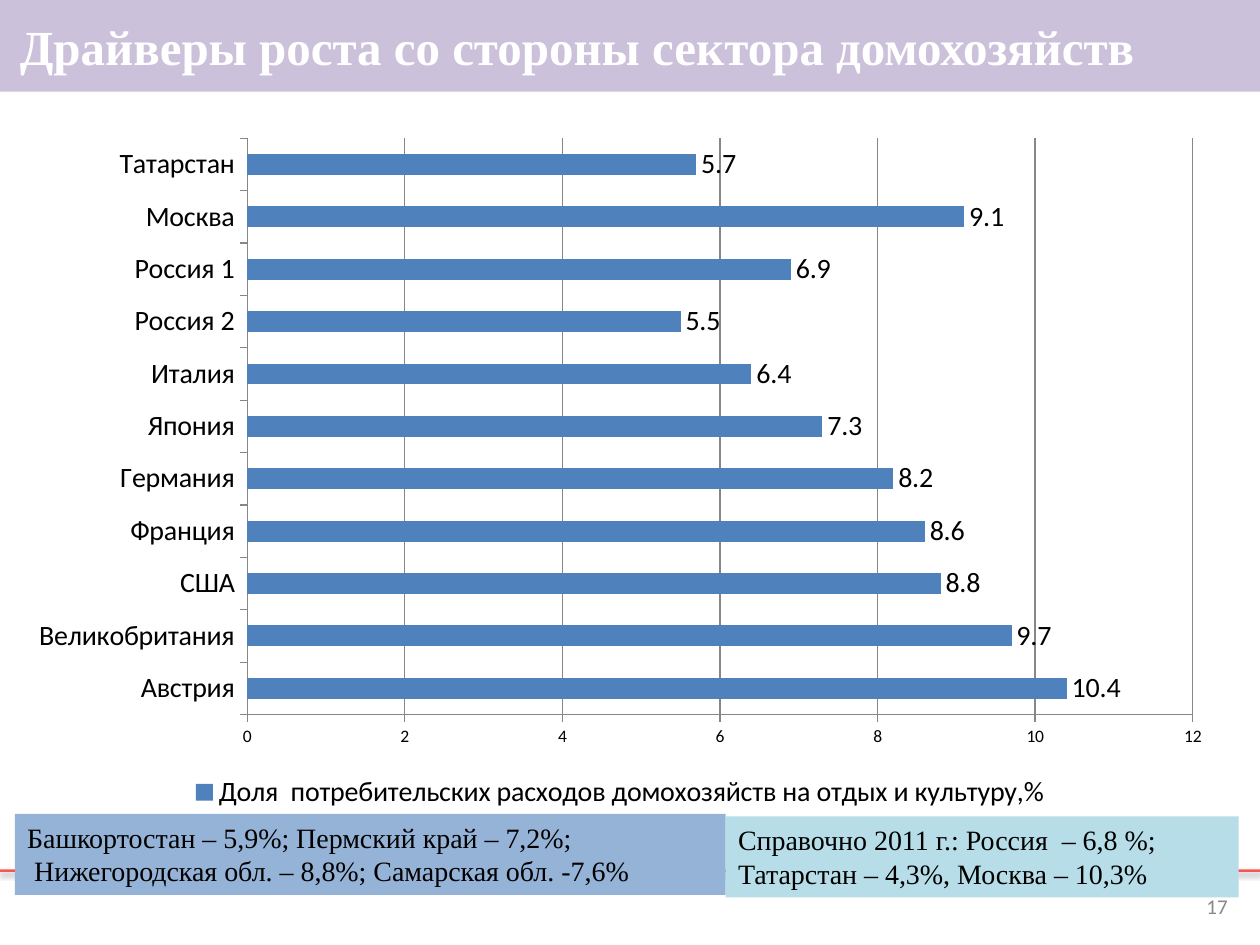
from dataclasses import dataclass

import lxml.etree
import pptx
import pptx.chart.data
import pptx.dml.color
import pptx.enum.chart
import pptx.enum.shapes
import pptx.enum.text
import pptx.oxml
import pptx.oxml.ns
import pptx.util

Cm = pptx.util.Cm
Pt = pptx.util.Pt
ALIGN = pptx.enum.text.PP_ALIGN
ANCHOR = pptx.enum.text.MSO_ANCHOR
TITLE_ONLY = 5


def rgb(value):
    return pptx.dml.color.RGBColor.from_string(value)


@dataclass(frozen=True)
class Theme:
    serif: str = "Times New Roman"
    sans: str = "Calibri"
    text: str = "000000"
    light: str = "FFFFFF"
    muted: str = "898989"
    band: str = "CCC1DA"
    bar: str = "4F81BD"
    grid: str = "878787"
    rule: str = "FF0000"
    regions: str = "95B3D7"
    reference: str = "B7DEE8"
    title_size: int = 28
    body_size: int = 16
    number_size: int = 12
    axis_size: int = 10


class Deck:
    """Holds the theme and the slide being built."""

    def __init__(self, theme):
        self.theme = theme
        self.prs = pptx.Presentation()
        self.prs.slide_width, self.prs.slide_height = Cm(25.4), Cm(19.05)
        self.s = self.prs.slides.add_slide(self.prs.slide_layouts[TITLE_ONLY])

    def font(self, font, size, color, name, bold=False):
        font.size, font.name, font.bold = Pt(size), name, bold
        font.color.rgb = rgb(color)

    def text(self, tf, lines, size, color, name, align=ALIGN.LEFT, bold=False):
        tf.word_wrap = True
        for i, line in enumerate(lines):
            p = tf.add_paragraph() if i else tf.paragraphs[0]
            p.alignment = align
            r = p.add_run()
            r.text = line
            self.font(r.font, size, color, name, bold)

    def rule(self, y):
        """Draw a translucent line with a soft shadow across the slide."""
        line = self.s.shapes.add_connector(
            pptx.enum.shapes.MSO_CONNECTOR.STRAIGHT, 0, y, self.prs.slide_width, y)
        line.line.color.rgb = rgb(self.theme.rule)
        line.line.width = Pt(1.5)
        ns = pptx.oxml.ns.qn
        color = next(line._element.spPr.iter(ns("a:srgbClr")))
        lxml.etree.SubElement(color, ns("a:alpha"), val="64000")
        line._element.spPr.append(pptx.oxml.parse_xml(
            f'<a:effectLst {pptx.oxml.ns.nsdecls("a")}>'
            '<a:outerShdw blurRad="40000" dist="20000" dir="5400000" rotWithShape="0">'
            '<a:srgbClr val="000000"><a:alpha val="38000"/></a:srgbClr>'
            '</a:outerShdw></a:effectLst>'))

    def number(self, text, x, y, w, h):
        tf = self.s.shapes.add_textbox(x, y, w, h).text_frame
        tf.vertical_anchor = ANCHOR.MIDDLE
        t = self.theme
        self.text(tf, [text], t.number_size, t.muted, t.sans, ALIGN.RIGHT)

    def title(self, text, height):
        t, sp = self.theme, self.s.shapes.title
        sp.left, sp.top, sp.width, sp.height = 0, 0, self.prs.slide_width, height
        sp.fill.solid()
        sp.fill.fore_color.rgb = rgb(t.band)
        tf = sp.text_frame
        tf.auto_size = pptx.enum.text.MSO_AUTO_SIZE.NONE
        tf.vertical_anchor = ANCHOR.MIDDLE
        tf.margin_left = Cm(0.4)
        tf.margin_top = tf.margin_bottom = Cm(0.1)
        self.text(tf, [text], t.title_size, t.light, t.serif, ALIGN.JUSTIFY, True)

    def bar_chart(self, name, shares, x, y, w, h):
        t = self.theme
        data = pptx.chart.data.CategoryChartData()
        data.categories = list(shares)
        data.add_series(name, list(shares.values()))
        chart = self.s.shapes.add_chart(
            pptx.enum.chart.XL_CHART_TYPE.BAR_CLUSTERED, x, y, w, h, data).chart
        chart.has_title = False
        self.font(chart.font, t.axis_size, t.text, t.sans)

        chart.has_legend = True
        chart.legend.position = pptx.enum.chart.XL_LEGEND_POSITION.BOTTOM
        chart.legend.include_in_layout = False
        self.font(chart.legend.font, t.body_size, t.text, t.sans)

        for axis, size in ((chart.category_axis, t.body_size),
                           (chart.value_axis, t.axis_size)):
            axis.major_tick_mark = pptx.enum.chart.XL_TICK_MARK.OUTSIDE
            axis.format.line.color.rgb = rgb(t.grid)
            self.font(axis.tick_labels.font, size, t.text, t.sans)
        chart.value_axis.has_major_gridlines = True
        chart.value_axis.major_gridlines.format.line.color.rgb = rgb(t.grid)

        plot = chart.plots[0]
        plot.vary_by_categories = False
        plot.gap_width = 150
        fill = plot.series[0].format.fill
        fill.solid()
        fill.fore_color.rgb = rgb(t.bar)
        plot.has_data_labels = True
        plot.data_labels.show_value = True
        self.font(plot.data_labels.font, t.body_size, t.text, t.sans)

    def note(self, lines, color, x, y, w, h):
        t = self.theme
        sp = self.s.shapes.add_shape(
            pptx.enum.shapes.MSO_SHAPE.RECTANGLE, x, y, w, h)
        sp.shadow.inherit = False
        sp.fill.solid()
        sp.fill.fore_color.rgb = rgb(color)
        sp.line.fill.background()
        tf = sp.text_frame
        tf.vertical_anchor = ANCHOR.TOP
        self.text(tf, lines, t.body_size, t.text, t.serif)
        tf.auto_size = pptx.enum.text.MSO_AUTO_SIZE.SHAPE_TO_FIT_TEXT


def main():
    theme = Theme()
    deck = Deck(theme)
    deck.title("Драйверы роста со стороны сектора домохозяйств", Cm(1.85))
    deck.rule(Cm(17.55))
    deck.number("17", Cm(23.7), Cm(17.75), Cm(1.3), Cm(1.02))
    shares = {
        "Австрия": 10.4, "Великобритания": 9.7, "США": 8.8, "Франция": 8.6,
        "Германия": 8.2, "Япония": 7.3, "Италия": 6.4, "Россия 2": 5.5,
        "Россия 1": 6.9, "Москва": 9.1, "Татарстан": 5.7,
    }
    deck.bar_chart("Доля  потребительских расходов домохозяйств на отдых и культуру,%",
                   shares, Cm(0.3), Cm(2.51), Cm(24.41), Cm(13.92))
    deck.note(["Башкортостан – 5,9%; Пермский край – 7,2%;",
               " Нижегородская обл. – 8,8%; Самарская обл. -7,6%"],
              theme.regions, Cm(0.3), Cm(16.41), Cm(14.33), Cm(1.63))
    deck.note(["Справочно 2011 г.: Россия  – 6,8 %;",
               "Татарстан – 4,3%, Москва – 10,3%"],
              theme.reference, Cm(14.63), Cm(16.46), Cm(10.34), Cm(1.63))
    deck.prs.save("out.pptx")


if __name__ == "__main__":
    main()
